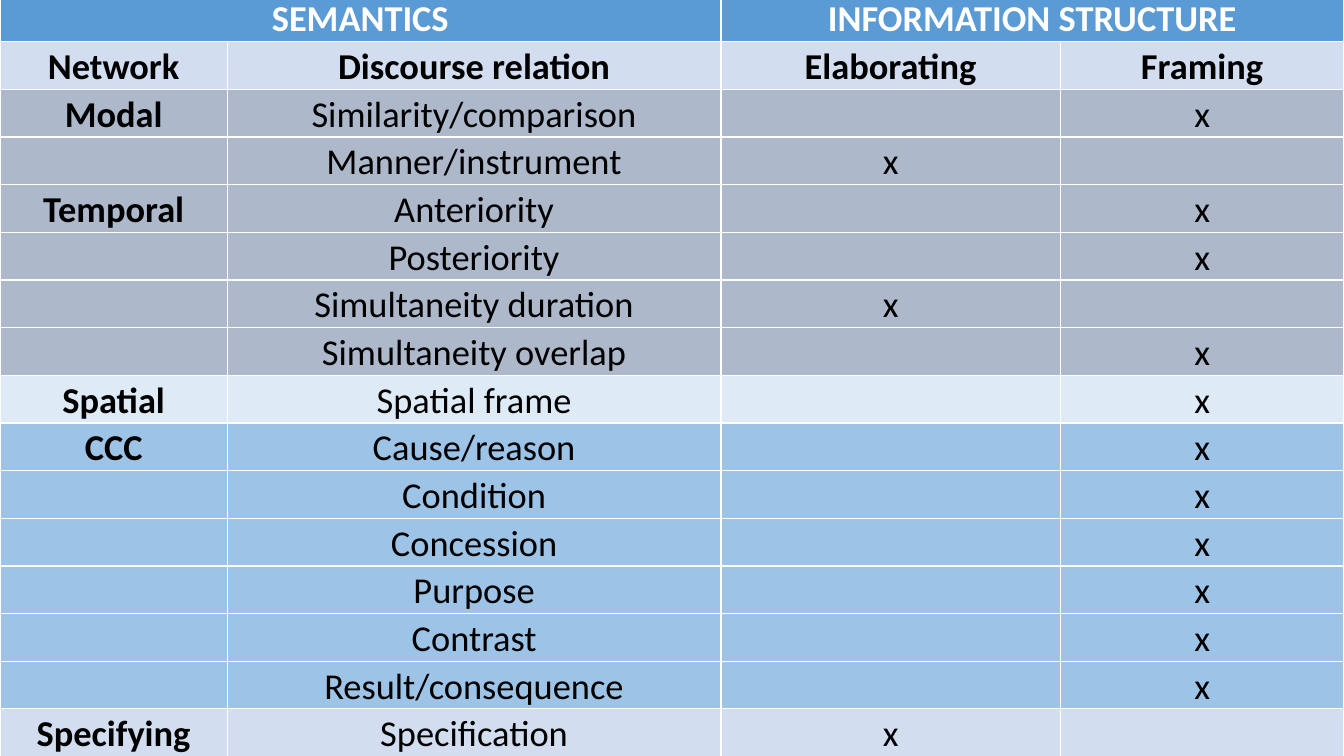
from pptx import Presentation
from pptx.dml.color import RGBColor
from pptx.enum.text import PP_ALIGN
from pptx.util import Pt

CENTER = PP_ALIGN.CENTER

WHITE = RGBColor(0xFF, 0xFF, 0xFF)
BLACK = RGBColor(0x00, 0x00, 0x00)
HEADER_BLUE = RGBColor(0x5B, 0x9B, 0xD5)
PALE_BLUE = RGBColor(0xD2, 0xDE, 0xEF)
GREY_BLUE = RGBColor(0xAD, 0xB9, 0xCA)
ICE_BLUE = RGBColor(0xDE, 0xEB, 0xF7)
SKY_BLUE = RGBColor(0x9D, 0xC3, 0xE6)

SLIDE_W, SLIDE_H = 960, 540
TABLE_TOP = -4.3
ROW_H = 34.02
COL_WIDTHS = [162.5, 352.5, 242.5, 202.5]

HEADINGS = ["SEMANTICS", "", "INFORMATION STRUCTURE", ""]
SUBHEADINGS = ["Network", "Discourse relation", "Elaborating", "Framing"]
ELABORATING = ["x", ""]
FRAMING = ["", "x"]
NETWORKS = [
    ("Modal", GREY_BLUE, [
        ("Similarity/comparison", FRAMING),
        ("Manner/instrument", ELABORATING),
    ]),
    ("Temporal", GREY_BLUE, [
        ("Anteriority", FRAMING),
        ("Posteriority", FRAMING),
        ("Simultaneity duration", ELABORATING),
        ("Simultaneity overlap", FRAMING),
    ]),
    ("Spatial", ICE_BLUE, [("Spatial frame", FRAMING)]),
    ("CCC", SKY_BLUE, [
        ("Cause/reason", FRAMING),
        ("Condition", FRAMING),
        ("Concession", FRAMING),
        ("Purpose", FRAMING),
        ("Contrast", FRAMING),
        ("Result/consequence", FRAMING),
    ]),
    ("Specifying", PALE_BLUE, [("Specification", ELABORATING)]),
]


def relation_rows():
    for network, fill, relations in NETWORKS:
        for i, (relation, marks) in enumerate(relations):
            yield [network if i == 0 else "", relation, *marks], fill


def fill_cell(cell, text, fill, color, bold):
    cell.fill.solid()
    cell.fill.fore_color.rgb = fill
    cell.margin_left = cell.margin_right = Pt(5)
    cell.margin_top = cell.margin_bottom = Pt(0)
    p = cell.text_frame.paragraphs[0]
    p.alignment = CENTER
    p.line_spacing = 1.07
    p.font.name = "Calibri"
    p.font.size = Pt(26)
    p.font.bold = bold
    p.font.color.rgb = color
    if text:
        p.add_run().text = text


def fill_row(table, row, texts, fill, color=BLACK, bold=False):
    table.rows[row].height = Pt(ROW_H)
    for col, text in enumerate(texts):
        fill_cell(table.cell(row, col), text, fill, color, bold or col == 0)


def add_relation_table(s):
    rows = list(relation_rows())
    count = len(rows) + 2
    table = s.shapes.add_table(count, len(COL_WIDTHS), Pt(0), Pt(TABLE_TOP),
                               Pt(SLIDE_W), Pt(ROW_H * count)).table
    table.horz_banding = False
    for column, width in zip(table.columns, COL_WIDTHS):
        column.width = Pt(width)
    fill_row(table, 0, HEADINGS, HEADER_BLUE, WHITE, bold=True)
    fill_row(table, 1, SUBHEADINGS, PALE_BLUE, bold=True)
    for row, (texts, fill) in enumerate(rows, start=2):
        fill_row(table, row, texts, fill)
    for col in (0, 2):
        table.cell(0, col).merge(table.cell(0, col + 1))


def main():
    prs = Presentation()
    prs.slide_width, prs.slide_height = Pt(SLIDE_W), Pt(SLIDE_H)
    s = prs.slides.add_slide(prs.slide_layouts[6])
    s.background.fill.solid()
    s.background.fill.fore_color.rgb = GREY_BLUE
    add_relation_table(s)
    prs.save("out.pptx")


if __name__ == "__main__":
    main()
